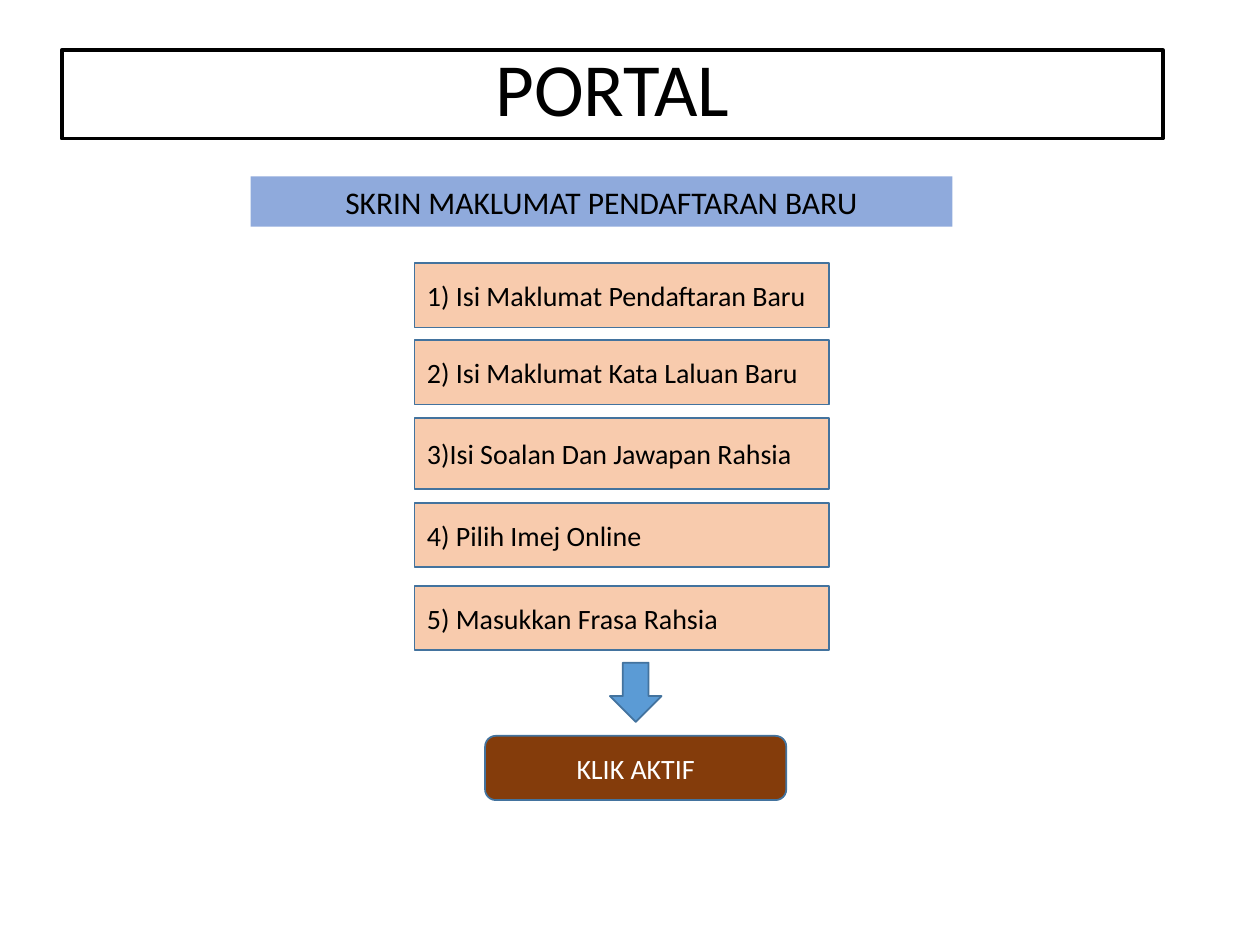
"""Build the PORTAL slide: steps for filling in the new registration screen."""
import dataclasses
import typing

import pptx
import pptx.dml.color
import pptx.enum.shapes
import pptx.enum.text
import pptx.util

SHAPE = pptx.enum.shapes.MSO_SHAPE
ALIGN = pptx.enum.text.PP_ALIGN
ANCHOR = pptx.enum.text.MSO_ANCHOR
FIT = pptx.enum.text.MSO_AUTO_SIZE

COLUMNS, ROWS = 100, 75
SLIDE_WIDTH, SLIDE_HEIGHT = pptx.util.Inches(10), pptx.util.Inches(7.5)
BORDER = "43739E"
STEP_LEFT, STEP_WIDTH, STEP_HEIGHT = 32.9, 32.9, 5.1


@dataclasses.dataclass(frozen=True)
class Box:
    """Describe one shape, placed in grid columns and rows."""

    left: float
    top: float
    width: float
    height: float
    fill: typing.Optional[str] = None
    text: str = ""
    size: float = 16
    ink: str = "000000"
    border: typing.Optional[str] = BORDER
    border_width: float = 1
    outline: SHAPE = SHAPE.RECTANGLE
    align: ALIGN = ALIGN.CENTER
    spacing: typing.Optional[float] = None
    fit: FIT = FIT.NONE
    rotation: float = 0


def step(top: float, text: str, height: float = STEP_HEIGHT) -> Box:
    """Describe one numbered step."""
    return Box(STEP_LEFT, top, STEP_WIDTH, height, "F8CBAD", text, align=ALIGN.LEFT)


HEADING = Box(4.9, 4, 87.4, 7, text="PORTAL", size=42.9, border="000000",
              border_width=2.25, spacing=0.8)
BANNER = Box(19.9, 14, 55.7, 4, "8FAADC", "SKRIN MAKLUMAT PENDAFTARAN BARU", 18,
             border=None, fit=FIT.SHAPE_TO_FIT_TEXT)
STEPS = [
    step(20.9, "1) Isi Maklumat Pendaftaran Baru"),
    step(27, "2) Isi Maklumat Kata Laluan Baru"),
    step(33.2, "3)Isi Soalan Dan Jawapan Rahsia", 5.6),
    step(39.9, "4) Pilih Imej Online"),
    step(46.5, "5) Masukkan Frasa Rahsia"),
]
ARROW = Box(48.1, 52.9, 4.7, 4.1, "5B9BD5", outline=SHAPE.RIGHT_ARROW, rotation=90)
ACTIVATE = Box(38.5, 58.4, 23.9, 5.1, "843C0B", "KLIK AKTIF", ink="FFFFFF",
               outline=SHAPE.ROUNDED_RECTANGLE)


def color(code: str) -> pptx.dml.color.RGBColor:
    """Turn a hex string into a colour."""
    return pptx.dml.color.RGBColor.from_string(code)


def across(columns: float) -> int:
    """Convert grid columns to a length."""
    return round(SLIDE_WIDTH * columns / COLUMNS)


def down(rows: float) -> int:
    """Convert grid rows to a length."""
    return round(SLIDE_HEIGHT * rows / ROWS)


def apply(target: typing.Any, values: typing.Dict[str, typing.Any]) -> None:
    """Set each named format value on the target."""
    for name, value in values.items():
        setattr(target, name, value)


def paint(fill: typing.Any, code: typing.Optional[str]) -> None:
    """Fill with a solid colour, or with nothing."""
    if code is None:
        fill.background()
    else:
        fill.solid()
        fill.fore_color.rgb = color(code)


def write(frame: typing.Any, box: Box) -> None:
    """Put the text of a box into its frame."""
    apply(frame, {"word_wrap": True, "auto_size": box.fit,
                  "vertical_anchor": ANCHOR.MIDDLE})
    paragraph = frame.paragraphs[0]
    apply(paragraph, {"alignment": box.align, "line_spacing": box.spacing})
    run = paragraph.add_run()
    run.text = box.text
    apply(run.font, {"name": "Calibri", "size": pptx.util.Pt(box.size)})
    run.font.color.rgb = color(box.ink)


def draw(slide: typing.Any, box: Box) -> None:
    """Draw one box on the slide."""
    shape = slide.shapes.add_shape(box.outline, across(box.left), down(box.top),
                                   across(box.width), down(box.height))
    shape.shadow.inherit = False
    shape.rotation = box.rotation
    paint(shape.fill, box.fill)
    paint(shape.line.fill, box.border)
    if box.border:
        shape.line.width = pptx.util.Pt(box.border_width)
    if box.text:
        write(shape.text_frame, box)


def main() -> None:
    """Build and save the slide."""
    deck = pptx.Presentation()
    apply(deck, {"slide_width": SLIDE_WIDTH, "slide_height": SLIDE_HEIGHT})
    slide = deck.slides.add_slide(deck.slide_layouts[6])
    for box in [BANNER, *STEPS, ACTIVATE, ARROW, HEADING]:
        draw(slide, box)
    deck.save("out.pptx")


if __name__ == "__main__":
    main()
